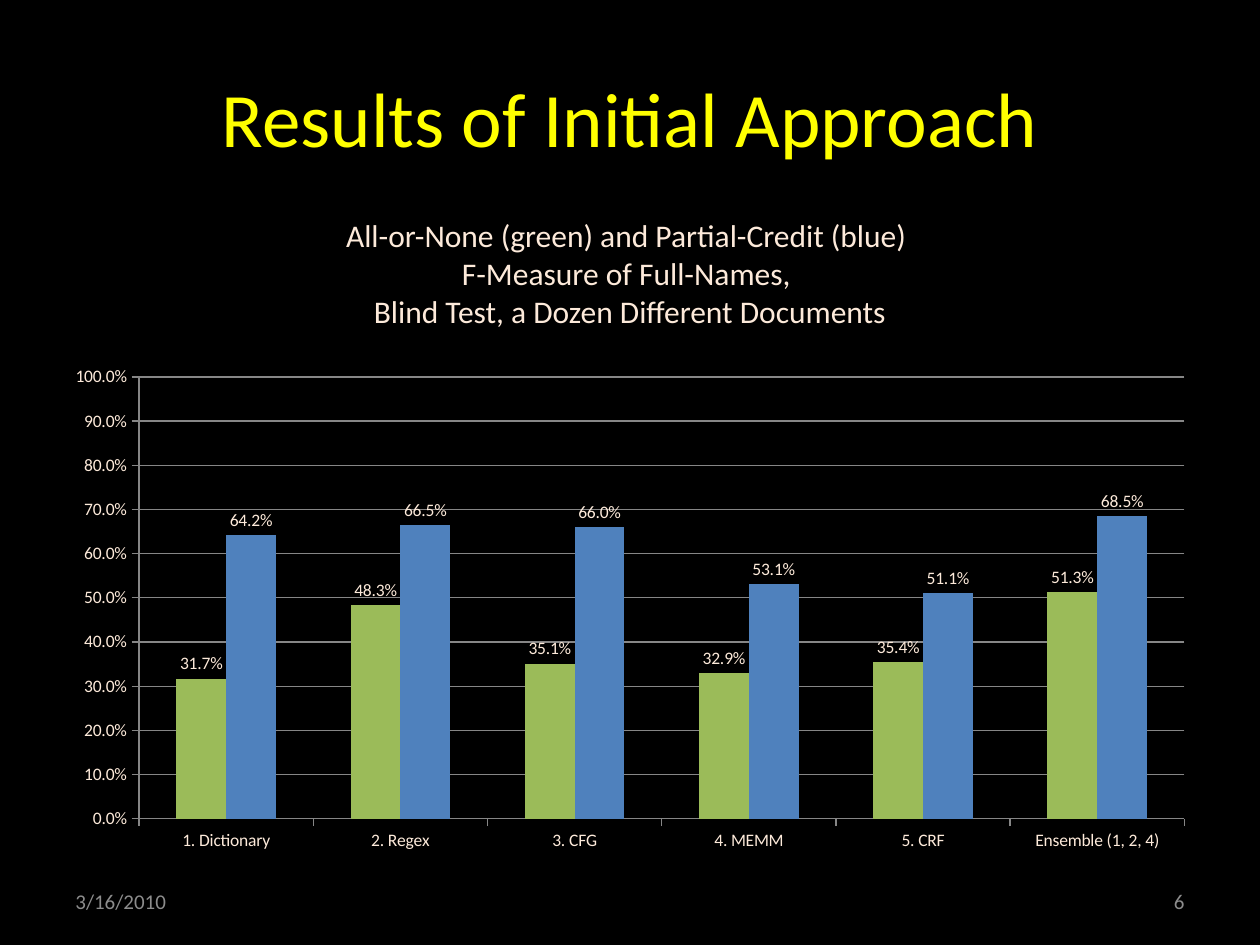
from pptx import Presentation
from pptx.chart.data import CategoryChartData
from pptx.dml.color import RGBColor
from pptx.enum.chart import XL_CHART_TYPE as ChartType, XL_LABEL_POSITION as LabelPos, XL_TICK_MARK as Tick
from pptx.enum.text import MSO_ANCHOR as Anchor, PP_ALIGN as Align
from pptx.util import Pt

COLORS = {
    "background": "000000",
    "title": "FFFF00",
    "text": "FDEADA",
    "footer": "8C8C8C",
    "axis": "868686",
    "all_or_none": "9BBB59",
    "partial_credit": "4F81BD",
}
PERCENT = "0.0%"
METHODS = ["1. Dictionary", "2. Regex", "3. CFG", "4. MEMM", "5. CRF", "Ensemble (1, 2, 4)"]
SCORES = {
    "all_or_none": ("Series 1", [0.317, 0.483, 0.351, 0.329, 0.354, 0.513]),
    "partial_credit": ("Series 2", [0.642, 0.665, 0.66, 0.531, 0.511, 0.685]),
}


def rgb(name):
    return RGBColor.from_string(COLORS[name])


def apply(target, **values):
    for key, value in values.items():
        setattr(target, key, value)


class SlideBuilder:
    font_name = "Calibri"

    def __init__(self, slide):
        self.slide = slide
        fill = slide.background.fill
        fill.solid()
        fill.fore_color.rgb = rgb("background")

    def style_font(self, font, size, color):
        apply(font, name=self.font_name, size=Pt(size))
        font.color.rgb = rgb(color)

    def fill_frame(self, frame, lines, size, color, align, anchor):
        apply(frame, word_wrap=True, vertical_anchor=anchor, text="\n".join(lines))
        for paragraph in frame.paragraphs:
            paragraph.alignment = align
            for run in paragraph.runs:
                self.style_font(run.font, size, color)

    def title(self, text, box):
        heading = self.slide.shapes.title
        apply(heading, **dict(zip(("left", "top", "width", "height"), map(Pt, box))))
        self.fill_frame(heading.text_frame, [text], 44, "title", Align.CENTER, Anchor.MIDDLE)

    def text(self, lines, box, size, color, align, anchor=Anchor.MIDDLE):
        label = self.slide.shapes.add_textbox(*map(Pt, box))
        self.fill_frame(label.text_frame, lines, size, color, align, anchor)

    def column_chart(self, categories, scores, box):
        data = CategoryChartData(number_format=PERCENT)
        data.categories = categories
        for name, values in scores.values():
            data.add_series(name, values)
        chart = self.slide.shapes.add_chart(
            ChartType.COLUMN_CLUSTERED, *map(Pt, box), data).chart
        apply(chart, has_legend=False, has_title=False)
        self.style_font(chart.font, 10, "text")

        plot = chart.plots[0]
        apply(plot, gap_width=150, overlap=0, vary_by_categories=False)
        for color, series in zip(scores, plot.series):
            series.format.fill.solid()
            series.format.fill.fore_color.rgb = rgb(color)
            labels = series.data_labels
            apply(labels, show_value=True, number_format=PERCENT,
                  number_format_is_linked=False, position=LabelPos.OUTSIDE_END)
            self.style_font(labels.font, 10, "text")
        self.style_axes(chart)

    def style_axes(self, chart):
        scale = chart.value_axis
        apply(scale, minimum_scale=0, maximum_scale=1, major_unit=0.1,
              has_major_gridlines=True)
        apply(scale.tick_labels, number_format=PERCENT, number_format_is_linked=False)
        for axis in (chart.category_axis, scale):
            apply(axis, major_tick_mark=Tick.OUTSIDE, minor_tick_mark=Tick.NONE)
            self.style_font(axis.tick_labels.font, 10, "text")
        for part in (chart.category_axis, scale, scale.major_gridlines):
            part.format.line.width = Pt(0.75)
            part.format.line.color.rgb = rgb("axis")


def main():
    deck = Presentation()
    apply(deck, slide_width=Pt(720), slide_height=Pt(540))
    title_only = deck.slide_layouts[5]
    page = SlideBuilder(deck.slides.add_slide(title_only))

    page.title("Results of Initial Approach", (36, 21.6, 648, 90))
    page.text(["6"], (516, 500.5, 168, 28.75), 12, "footer", Align.RIGHT)
    page.text(["3/16/2010"], (36, 500.5, 168, 28.75), 12, "footer", Align.LEFT)
    page.column_chart(METHODS, SCORES, (30, 204, 660, 288))
    page.text(
        ["All-or-None (green) and Partial-Credit (blue) ",
         "F-Measure of Full-Names, ",
         "Blind Test, a Dozen Different Documents"],
        (165, 120, 390, 72.7), 18, "text", Align.CENTER, Anchor.TOP)
    deck.save("out.pptx")


if __name__ == "__main__":
    main()
